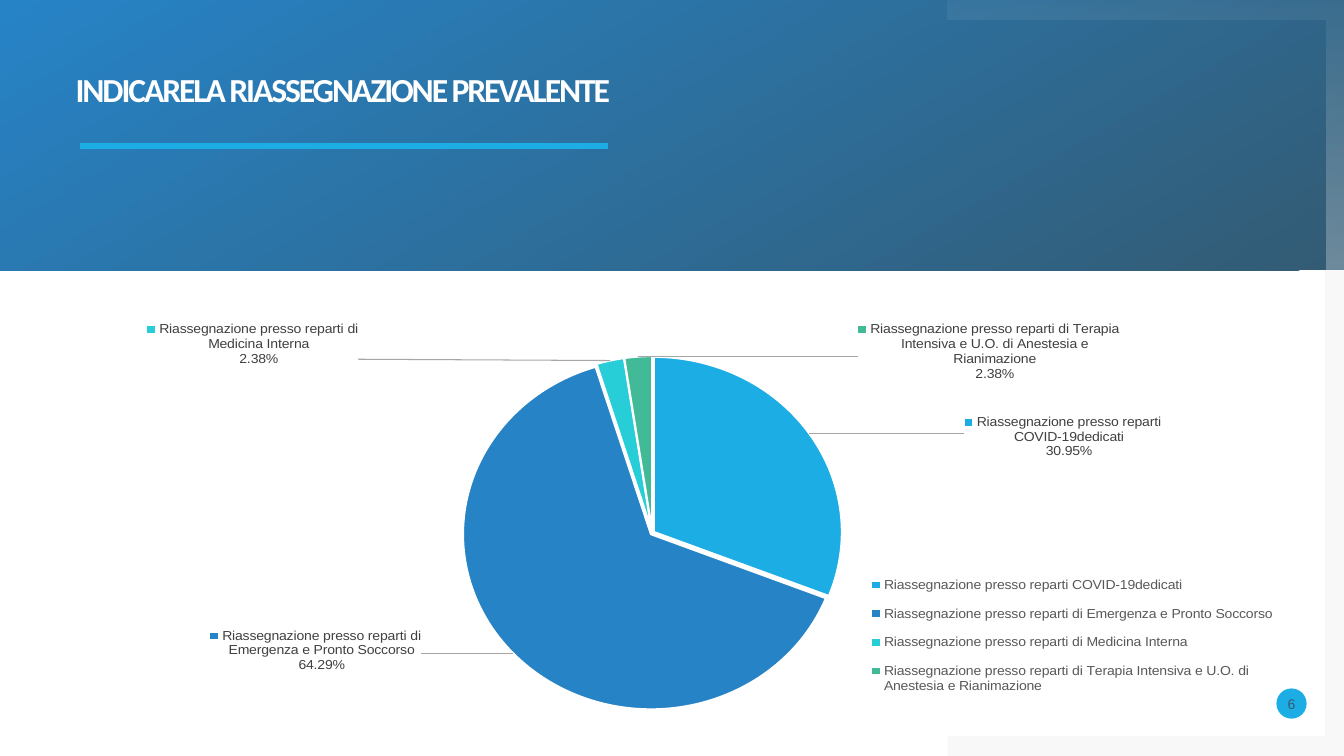
"""Build a slide with a pie chart of staff reassignments."""
from dataclasses import dataclass

from pptx import Presentation
from pptx.chart.data import CategoryChartData
from pptx.dml.color import RGBColor
from pptx.enum.chart import XL_CHART_TYPE, XL_LEGEND_POSITION
from pptx.enum.shapes import MSO_CONNECTOR, MSO_SHAPE
from pptx.enum.text import MSO_ANCHOR, PP_ALIGN
from pptx.oxml import parse_xml
from pptx.oxml.ns import nsdecls, qn
from pptx.util import Inches, Pt


@dataclass(frozen=True)
class Theme:
    white: str = "FFFFFF"
    dark: str = "335B74"
    blue: str = "2683C6"
    accent: str = "1CADE4"
    grey: str = "808080"
    label: str = "404040"
    legend: str = "595959"
    leader: str = "A6A6A6"
    slices: tuple = ("1CADE4", "2683C6", "27CED7", "42BA97")
    heading: str = "Calibri"
    body: str = "Arial"
    title_size: int = 24
    body_size: int = 10


@dataclass(frozen=True)
class Reassignment:
    ward: str
    percent: float
    shift: tuple
    width: float
    height: float


REASSIGNMENTS = (
    Reassignment("Riassegnazione presso reparti COVID-19dedicati", 30.95, (0.12, 0.07), 0.17, 0.1),
    Reassignment("Riassegnazione presso reparti di Emergenza e Pronto Soccorso", 64.29,
                 (-0.07, -0.07), 0.17, 0.1),
    Reassignment("Riassegnazione presso reparti di Medicina Interna", 2.38, (-0.2, 0.01), 0.17, 0.1),
    Reassignment("Riassegnazione presso reparti di Terapia Intensiva e U.O. di Anestesia e Rianimazione",
                 2.38, (0.28, 0.06), 0.21, 0.14),
)


class Painter:
    def __init__(self, page, theme):
        self.page, self.theme = page, theme

    def style_font(self, font, name, size, color, bold=False):
        font.name, font.size, font.bold = name, Pt(size), bold
        font.color.rgb = RGBColor.from_string(color)

    def fill(self, shape, colors, angle=0):
        shape.shadow.inherit = False
        shape.line.fill.background()
        if len(colors) == 1:
            shape.fill.solid()
            shape.fill.fore_color.rgb = RGBColor.from_string(colors[0])
            return
        shape.fill.gradient()
        shape.fill.gradient_angle = angle
        for stop, color in zip(shape.fill.gradient_stops, colors):
            stop.color.rgb = RGBColor.from_string(color)

    def preset(self, kind, left, top, width, height, colors, angle=0):
        shape = self.page.shapes.add_shape(
            kind, Inches(left), Inches(top), Inches(width), Inches(height))
        self.fill(shape, colors, angle)
        return shape

    def outline(self, points, colors, alphas, angle=0):
        corners = [(Inches(x), Inches(y)) for x, y in points]
        builder = self.page.shapes.build_freeform(*corners[0])
        builder.add_line_segments(corners[1:], close=True)
        shape = builder.convert_to_shape()
        self.fill(shape, colors, angle)
        for color, percent in zip(shape._element.spPr.iter(qn("a:srgbClr")), alphas):
            color.append(parse_xml(f'<a:alpha {nsdecls("a")} val="{percent * 1000}"/>'))

    def rule(self, left, right, y, color, weight):
        line = self.page.shapes.add_connector(
            MSO_CONNECTOR.STRAIGHT, Inches(left), Inches(y), Inches(right), Inches(y))
        line.line.color.rgb = RGBColor.from_string(color)
        line.line.width = Pt(weight)
        line._element.spPr.append(parse_xml(f'<a:effectLst {nsdecls("a")}/>'))

    def put_text(self, shape, text):
        frame = shape.text_frame
        frame.word_wrap = True
        frame.margin_left = frame.margin_top = frame.margin_right = frame.margin_bottom = 0
        frame.text = text
        return frame.paragraphs[0]

    def title(self, text, left, top, width, height):
        box = self.page.shapes.add_textbox(
            Inches(left), Inches(top), Inches(width), Inches(height))
        para = self.put_text(box, text)
        para.line_spacing = 0.9
        self.style_font(para.font, self.theme.heading, self.theme.title_size, self.theme.white, True)
        para.runs[0]._r.get_or_add_rPr().set("spc", "-150")

    def badge(self, text, left, top, size):
        disc = self.preset(MSO_SHAPE.OVAL, left, top, size, size, [self.theme.accent])
        para = self.put_text(disc, text)
        disc.text_frame.vertical_anchor = MSO_ANCHOR.MIDDLE
        para.alignment = PP_ALIGN.CENTER
        self.style_font(para.font, self.theme.body, self.theme.body_size, self.theme.dark)

    def layout(self, x, y, width=None, height=None, inner=False):
        parts = '<c:layoutTarget val="inner"/>' if inner else ""
        if width:
            parts += '<c:xMode val="edge"/><c:yMode val="edge"/>'
        parts += f'<c:x val="{x}"/><c:y val="{y}"/>'
        if width:
            parts += f'<c:w val="{width}"/><c:h val="{height}"/>'
        return f'<c:layout {nsdecls("c")}><c:manualLayout>{parts}</c:manualLayout></c:layout>'

    def labels(self, slices):
        theme = self.theme
        style = (f'<c:numFmt formatCode="0.00%" sourceLinked="0"/><c:spPr><a:noFill/></c:spPr>'
                 f'<c:txPr><a:bodyPr wrap="square"/><a:p><a:pPr><a:defRPr sz="{theme.body_size * 100}">'
                 f'<a:solidFill><a:srgbClr val="{theme.label}"/></a:solidFill>'
                 f'<a:latin typeface="{theme.body}"/></a:defRPr></a:pPr>'
                 f'<a:endParaRPr lang="it-IT"/></a:p></c:txPr><c:dLblPos val="outEnd"/>')
        shown = (("LegendKey", 1), ("Val", 0), ("CatName", 1), ("SerName", 0),
                 ("Percent", 1), ("BubbleSize", 0))
        style += "".join(f'<c:show{name} val="{flag}"/>' for name, flag in shown)
        style += "<c:separator>\n</c:separator>"
        entries = "".join(
            f'<c:dLbl><c:idx val="{index}"/>{self.layout(*item.shift)}{style}'
            f'<c:extLst><c:ext uri="{{CE6537A1-D6FC-4f65-9D91-7224C49458BB}}" '
            f'xmlns:c15="http://schemas.microsoft.com/office/drawing/2012/chart"><c15:layout>'
            f'<c:manualLayout><c:w val="{item.width}"/><c:h val="{item.height}"/></c:manualLayout>'
            f'</c15:layout></c:ext></c:extLst></c:dLbl>' for index, item in enumerate(slices))
        return parse_xml(
            f'<c:dLbls {nsdecls("c", "a")}>{entries}{style}<c:showLeaderLines val="1"/>'
            f'<c:leaderLines><c:spPr><a:ln w="9525"><a:solidFill><a:srgbClr val="{theme.leader}"/>'
            f'</a:solidFill></a:ln></c:spPr></c:leaderLines></c:dLbls>')

    def pie(self, slices, left, top, width, height):
        data = CategoryChartData()
        data.categories = [item.ward for item in slices]
        data.add_series("Series 1", [item.percent for item in slices])
        chart = self.page.shapes.add_chart(
            XL_CHART_TYPE.PIE, Inches(left), Inches(top), Inches(width), Inches(height), data).chart
        chart.has_title = False
        chart.font.name, chart.font.size = self.theme.body, Pt(self.theme.body_size)
        chart.plots[0].vary_by_categories = True
        series = chart.plots[0].series[0]
        for index, color in enumerate(self.theme.slices):
            look = series.points[index].format
            look.fill.solid()
            look.fill.fore_color.rgb = RGBColor.from_string(color)
            look.line.color.rgb = RGBColor.from_string(self.theme.white)
            look.line.width = Pt(1.5)
        for point in series._element.findall(qn("c:dPt")):
            point.find(qn("c:spPr")).addprevious(parse_xml(f'<c:explosion {nsdecls("c")} val="1"/>'))
        series._element.find(qn("c:cat")).addprevious(self.labels(slices))
        chart.has_legend = True
        legend = chart.legend
        legend.position = XL_LEGEND_POSITION.RIGHT
        legend.include_in_layout = False
        self.style_font(legend.font, self.theme.body, self.theme.body_size, self.theme.legend)
        plot_area = chart._chartSpace.chart.plotArea
        for parent, index, place in ((plot_area, 0, self.layout(0.34, 0.08, 0.3, 0.87, True)),
                                     (legend._element, 1, self.layout(0.66, 0.59, 0.33, 0.35))):
            for present in parent.findall(qn("c:layout")):
                parent.remove(present)
            parent.insert(index, parse_xml(place))


def main():
    deck = Presentation()
    deck.slide_width, deck.slide_height = Inches(13.33), Inches(7.5)
    theme = Theme()
    painter = Painter(deck.slides.add_slide(deck.slide_layouts[6]), theme)
    painter.outline([(13.14, 2.68), (13.33, 2.68), (13.33, 7.5), (9.4, 7.5), (9.4, 7.3), (13.14, 7.3)],
                    [theme.grey], [5])
    painter.preset(MSO_SHAPE.RECTANGLE, 0, 0, 13.33, 2.68, [theme.dark, theme.blue], 120)
    painter.outline([(9.4, 0), (13.33, 0), (13.33, 2.68), (13.14, 2.68), (13.14, 0.2), (9.4, 0.2)],
                    [theme.white, theme.white], [5, 30], 270)
    painter.title("INDICARELA RIASSEGNAZIONE PREVALENTE", 0.75, 0.73, 11.49, 0.47)
    painter.badge("6", 12.66, 6.83, 0.3)
    painter.rule(0.79, 6.03, 1.45, theme.accent, 4.32)
    painter.pie(REASSIGNMENTS, 0.38, 2.9, 12.43, 4.36)
    deck.save("out.pptx")


if __name__ == "__main__":
    main()
